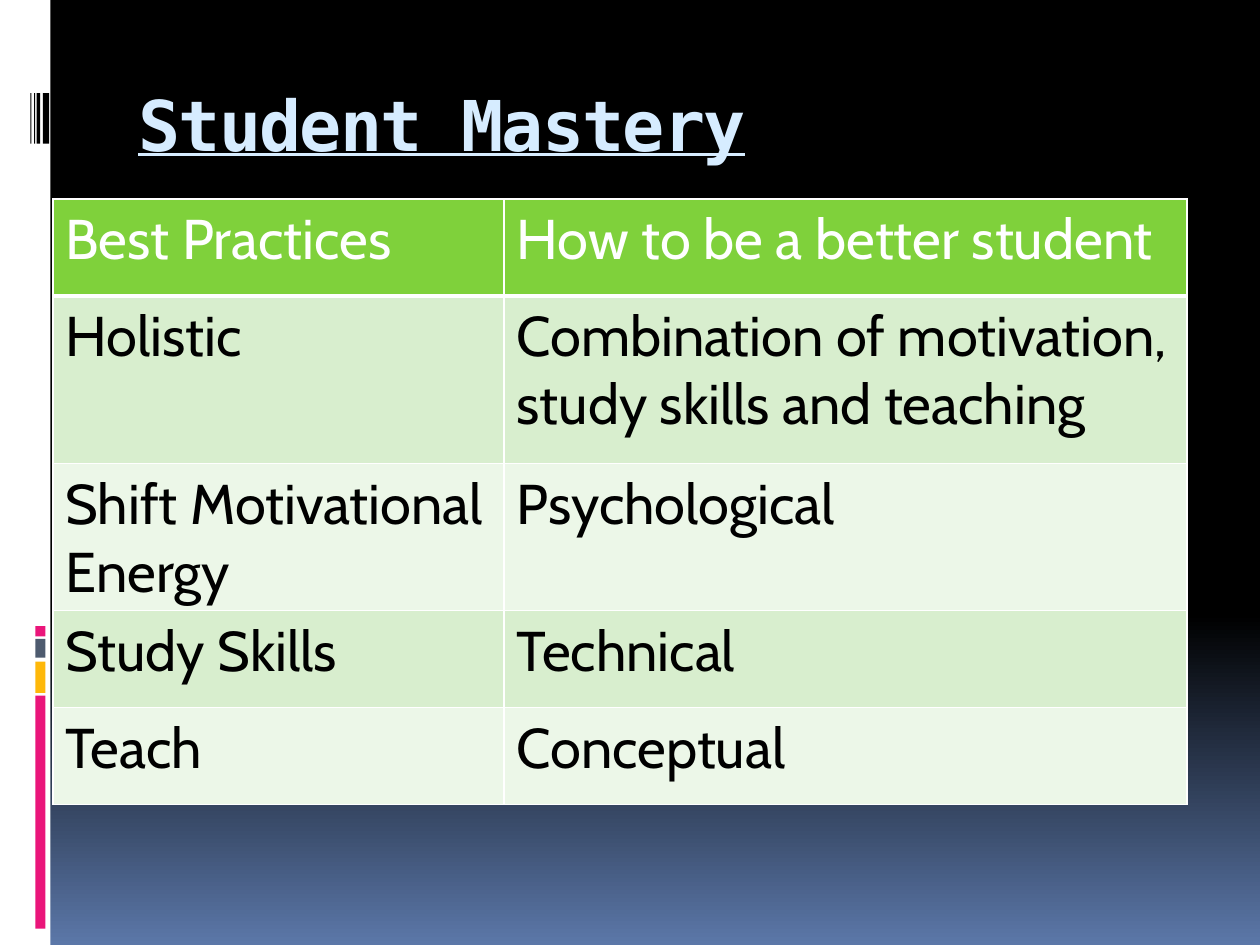
"""Build the Student Mastery slide with its table of best practices."""
from copy import deepcopy
from dataclasses import dataclass

from lxml import etree
from pptx import Presentation
from pptx import util as u
from pptx.dml.color import RGBColor
from pptx.enum import shapes, text
from pptx.oxml.ns import qn


@dataclass(frozen=True)
class Theme:
    black: str = "000000"
    white: str = "FFFFFF"
    dusk: str = "5B77A8"
    pink: str = "EA157A"
    gold: str = "FEB80A"
    slate: str = "4E5B6F"
    sky: str = "D6ECFF"
    green: str = "7FD13B"
    bands: tuple = ("D8EECE", "ECF7E8")
    head: str = "DejaVu Sans Mono"
    body: str = "Cabin"
    large: int = 40
    small: int = 32
    thin: int = 1
    thick: int = 3


class Deck:
    def __init__(self, theme):
        self.theme = theme
        self.file = Presentation()
        self.file.slide_width, self.file.slide_height = u.Inches(10), u.Inches(7.5)
        self.slide = self.file.slides.add_slide(self.file.slide_layouts[6])

    def back(self, start, end, hold):
        fill = self.slide.background.fill
        fill.gradient()
        fill.gradient_angle = 270
        first, last = fill.gradient_stops
        first.color.rgb = RGBColor.from_string(start)
        last.color.rgb = RGBColor.from_string(end)
        first.position, last.position = 0, 1
        stop = next(self.slide.element.iter(qn("a:gs")))
        middle = deepcopy(stop)
        middle.set("pos", str(hold * 1000))
        stop.addnext(middle)

    def bar(self, left, top, width, height, color):
        box = self.slide.shapes.add_shape(
            shapes.MSO_SHAPE.RECTANGLE, *map(u.Inches, (left, top, width, height)))
        box.shadow.inherit = False
        box.fill.solid()
        box.fill.fore_color.rgb = RGBColor.from_string(color)
        box.line.fill.background()

    def font(self, frame, face, size, color, bold=False):
        for part in frame.paragraphs:
            for run in part.runs:
                run.font.name, run.font.size = face, u.Pt(size)
                run.font.bold = bold
                run.font.color.rgb = RGBColor.from_string(color)

    def title(self, words, left, top, width, height):
        box = self.slide.shapes.add_textbox(*map(u.Inches, (left, top, width, height)))
        frame = box.text_frame
        frame.word_wrap = True
        frame.vertical_anchor = text.MSO_ANCHOR.TOP
        frame.margin_top = u.Inches(0.09)
        frame.text = words
        self.font(frame, self.theme.head, self.theme.large, self.theme.sky, True)
        font = frame.paragraphs[0].runs[0].font
        font.underline = True
        font._element.set("spc", "-100")

    def edge(self, cell, base):
        props = cell._tc.get_or_add_tcPr()
        sides = {"L": self.theme.thin, "R": self.theme.thin, "T": self.theme.thin, "B": base}
        for spot, (side, size) in enumerate(sides.items()):
            line = etree.Element(qn(f"a:ln{side}"), w=str(u.Pt(size)))
            fill = etree.SubElement(line, qn("a:solidFill"))
            etree.SubElement(fill, qn("a:srgbClr"), val=self.theme.white)
            props.insert(spot, line)

    def table(self, rows, left, top, widths, heights):
        size = (left, top, sum(widths), sum(heights))
        grid = self.slide.shapes.add_table(
            len(rows), len(widths), *map(u.Inches, size)).table
        for column, width in zip(grid.columns, widths):
            column.width = u.Inches(width)
        for index, (row, height) in enumerate(zip(rows, heights)):
            grid.rows[index].height = u.Inches(height)
            if index == 0:
                fill, ink, base = self.theme.green, self.theme.white, self.theme.thick
            else:
                fill = self.theme.bands[(index - 1) % 2]
                ink, base = self.theme.black, self.theme.thin
            for cell, words in zip(grid.rows[index].cells, row):
                cell.text_frame.text = words
                self.font(cell.text_frame, self.theme.body, self.theme.small, ink)
                cell.fill.solid()
                cell.fill.fore_color.rgb = RGBColor.from_string(fill)
                self.edge(cell, base)


def main():
    theme = Theme()
    deck = Deck(theme)
    deck.back(theme.black, theme.dusk, 65)
    deck.bar(0, 0, 0.4, 7.5, theme.white)
    blocks = [(5.52, 1.85, theme.pink), (5.25, 0.25, theme.gold),
              (5.07, 0.15, theme.slate), (4.97, 0.08, theme.pink)]
    for top, height, color in blocks:
        deck.bar(0.28, top, 0.08, height, color)
    for left, width in [(0.34, 0.05), (0.29, 0.03), (0.27, 0.01), (0.24, 0.01)]:
        deck.bar(left, 0.74, width, 0.4, theme.black)
    deck.title("Student Mastery", 1, 0.56, 8.5, 1)
    rows = [
        ("Best Practices", "How to be a better student"),
        ("Holistic", "Combination of motivation, study skills and teaching"),
        ("Shift Motivational Energy", "Psychological"),
        ("Study Skills", "Technical"),
        ("Teach", "Conceptual"),
    ]
    deck.table(rows, 0.42, 1.58, (3.58, 5.42), (0.77, 1.33, 0.77, 0.77, 0.77))
    deck.file.save("out.pptx")


if __name__ == "__main__":
    main()
